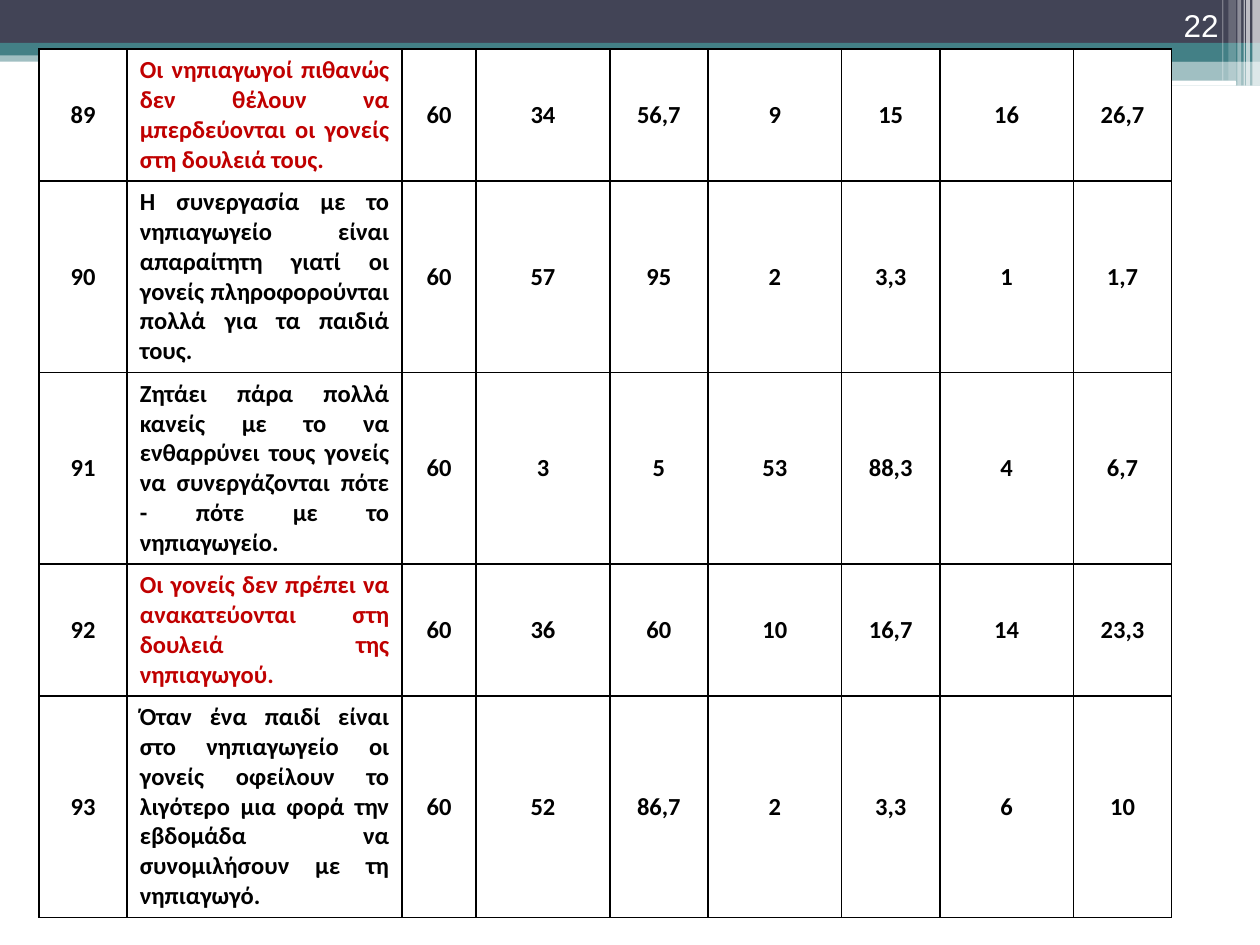
from typing import NamedTuple

from lxml import etree
from pptx import Presentation
from pptx.dml.color import RGBColor
from pptx.enum import shapes, text
from pptx.oxml import ns
from pptx.util import Inches, Pt

WHITE = RGBColor(0xFF, 0xFF, 0xFF)
BLACK = RGBColor(0x00, 0x00, 0x00)
RED = RGBColor(0xC0, 0x00, 0x00)
TEAL = RGBColor(0x43, 0x80, 0x86)
SLATE = RGBColor(0x42, 0x44, 0x56)

RECT = shapes.MSO_SHAPE.RECTANGLE
ROUNDED = shapes.MSO_SHAPE.ROUNDED_RECTANGLE


class Band(NamedTuple):
    left: float
    top: float
    width: float
    height: float
    color: RGBColor
    opacity: int = 100
    preset: shapes.MSO_SHAPE = RECT


class Statement(NamedTuple):
    number: int
    wording: str
    values: tuple[str, ...]
    height: float
    color: RGBColor = BLACK


BANDS = [
    Band(0, 0.4, 10, 0.09, TEAL, 50),
    Band(0, 0, 10, 0.34, SLATE),
    Band(0, 0.34, 10, 0.1, TEAL),
    Band(5.92, 0.39, 4.08, 0.1, TEAL),
    Band(5.92, 0.48, 4.08, 0.2, TEAL, 50),
    Band(5.91, 0.54, 3.35, 0.03, WHITE, preset=ROUNDED),
    Band(8.06, 0.64, 1.75, 0.04, WHITE, preset=ROUNDED),
    # Translucent stripes at the right edge
    Band(9.94, 0, 0.06, 0.68, WHITE, 65),
    Band(9.89, 0, 0.03, 0.68, WHITE, 65),
    Band(9.87, 0, 0.01, 0.68, WHITE, 60),
    Band(9.82, 0, 0.03, 0.68, WHITE, 40),
    Band(9.75, 0, 0.06, 0.64, WHITE, 20),
    Band(9.7, 0, 0.01, 0.64, WHITE, 30),
]

COLUMN_WIDTHS = [0.7, 2.18, 0.59] + [1.06, 0.78] * 3
WORDING_COLUMN = 1

STATEMENTS = [
    Statement(89, "Οι νηπιαγωγοί πιθανώς δεν θέλουν να μπερδεύονται οι γονείς "
              "στη δουλειά τους.",
              ("60", "34", "56,7", "9", "15", "16", "26,7"), 1.03, RED),
    Statement(90, "Η συνεργασία με το νηπιαγωγείο είναι απαραίτητη γιατί οι "
              "γονείς πληροφορούνται πολλά για τα παιδιά τους.",
              ("60", "57", "95", "2", "3,3", "1", "1,7"), 1.5),
    Statement(91, "Ζητάει πάρα πολλά κανείς με το να ενθαρρύνει τους γονείς "
              "να συνεργάζονται πότε - πότε με το νηπιαγωγείο.",
              ("60", "3", "5", "53", "88,3", "4", "6,7"), 1.5),
    Statement(92, "Οι γονείς δεν πρέπει να ανακατεύονται στη δουλειά της "
              "νηπιαγωγού.",
              ("60", "36", "60", "10", "16,7", "14", "23,3"), 1.03, RED),
    Statement(93, "Όταν ένα παιδί είναι στο νηπιαγωγείο οι γονείς οφείλουν το "
              "λιγότερο μια φορά την εβδομάδα να συνομιλήσουν με τη νηπιαγωγό.",
              ("60", "52", "86,7", "2", "3,3", "6", "10"), 1.73),
]


def draw_band(page, band: Band) -> None:
    shape = page.shapes.add_shape(
        band.preset, Inches(band.left), Inches(band.top),
        Inches(band.width), Inches(band.height))
    shape.shadow.inherit = False
    shape.line.fill.background()
    shape.fill.solid()
    shape.fill.fore_color.rgb = band.color
    if band.opacity < 100:
        color = shape.fill._xPr.find(".//" + ns.qn("a:srgbClr"))
        etree.SubElement(color, ns.qn("a:alpha"), val=str(band.opacity * 1000))


def add_borders(cell, color: RGBColor, width: Pt) -> None:
    properties = cell._tc.get_or_add_tcPr()
    for side in ("lnL", "lnR", "lnT", "lnB"):
        line = etree.SubElement(properties, ns.qn(f"a:{side}"), w=str(int(width)))
        fill = etree.SubElement(line, ns.qn("a:solidFill"))
        etree.SubElement(fill, ns.qn("a:srgbClr"), val=str(color))


def format_span(para, font: str, size: int, color: RGBColor, bold: bool) -> None:
    span = para.runs[0]
    span.font.name = font
    span.font.size = Pt(size)
    span.font.bold = bold
    span.font.color.rgb = color


def fill_cell(cell, wording: str, color: RGBColor, is_wording: bool) -> None:
    add_borders(cell, BLACK, Pt(1))
    cell.fill.solid()
    cell.fill.fore_color.rgb = WHITE
    cell.vertical_anchor = (text.MSO_ANCHOR.TOP if is_wording
                            else text.MSO_ANCHOR.MIDDLE)
    para = cell.text_frame.paragraphs[0]
    para.text = wording
    para.alignment = (text.PP_ALIGN.JUSTIFY if is_wording
                      else text.PP_ALIGN.CENTER)
    format_span(para, "Calibri", 14, color, bold=True)


def draw_table(page, statements: list[Statement]) -> None:
    height = sum(statement.height for statement in statements)
    table = page.shapes.add_table(
        len(statements), len(COLUMN_WIDTHS), Inches(0.31), Inches(0.39),
        Inches(sum(COLUMN_WIDTHS)), Inches(height)).table
    table.first_row = False
    table.horz_banding = False
    for column, width in zip(table.columns, COLUMN_WIDTHS):
        column.width = Inches(width)
    for row, statement in zip(table.rows, statements):
        row.height = Inches(statement.height)
        entries = (str(statement.number), statement.wording, *statement.values)
        for index, (cell, entry) in enumerate(zip(row.cells, entries)):
            is_wording = index == WORDING_COLUMN
            fill_cell(cell, entry, statement.color if is_wording else BLACK,
                      is_wording)


def draw_page_number(page, number: int) -> None:
    box = page.shapes.add_textbox(Inches(8.94), 0, Inches(0.83), Inches(0.4))
    frame = box.text_frame
    frame.word_wrap = True
    frame.vertical_anchor = text.MSO_ANCHOR.BOTTOM
    frame.text = str(number)
    para = frame.paragraphs[0]
    para.alignment = text.PP_ALIGN.RIGHT
    format_span(para, "Arial", 18, WHITE, bold=False)


def main() -> None:
    deck = Presentation()
    deck.slide_width, deck.slide_height = Inches(10), Inches(7.5)
    # The slide has no title, so it uses the blank layout
    page = deck.slides.add_slide(deck.slide_layouts[6])
    for band in BANDS:
        draw_band(page, band)
    draw_table(page, STATEMENTS)
    draw_page_number(page, 22)
    deck.save("out.pptx")


if __name__ == "__main__":
    main()
